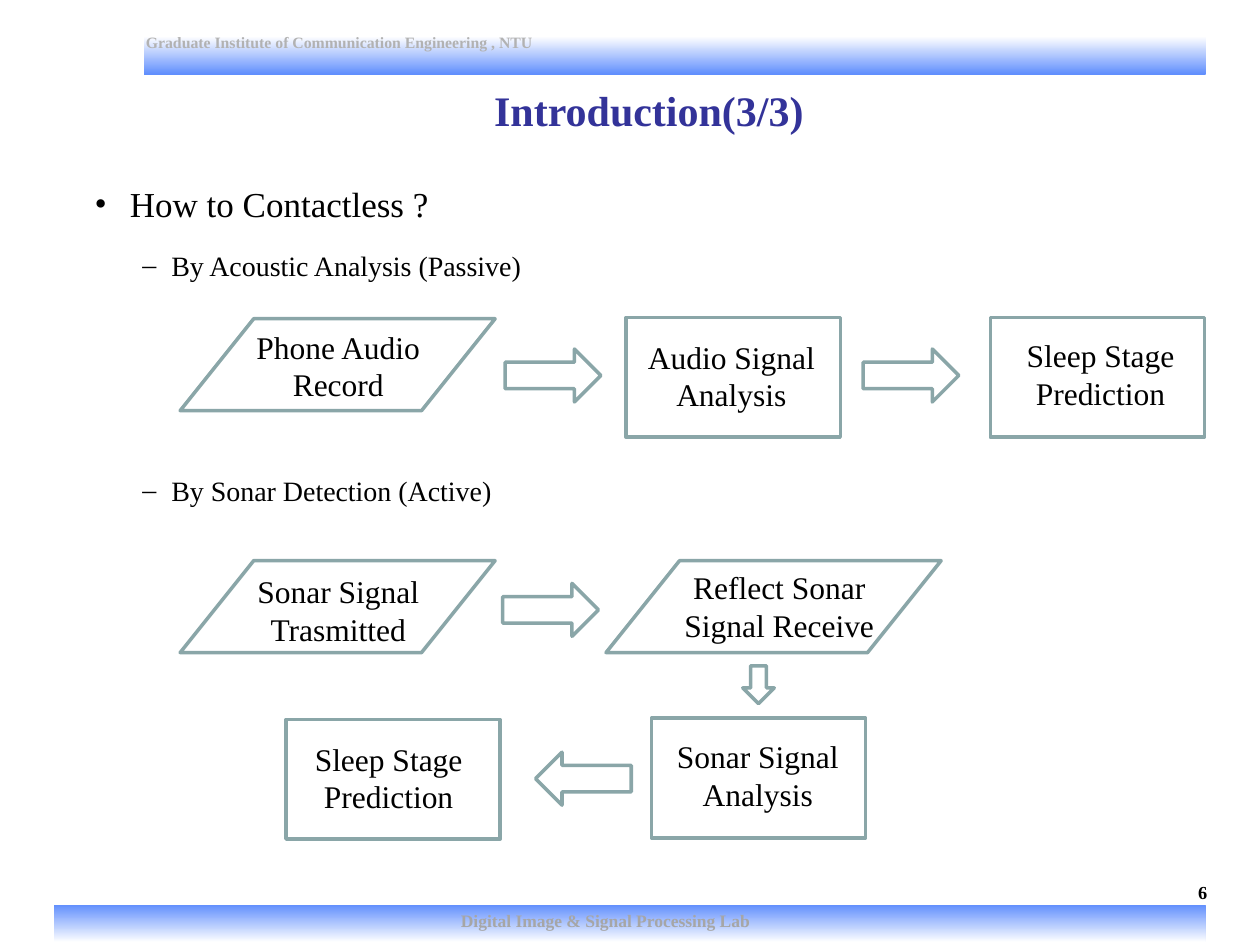
import pptx
import pptx.dml.color
import pptx.enum.shapes
import pptx.enum.text
import pptx.util
from lxml import etree
from pptx.util import Inches

FONT = "Times New Roman"
OUTLINE = "8AA6A8"
BLACK = "000000"
WHITE = "FFFFFF"
BAR_BLUE = "618FFD"
SHAPE = pptx.enum.shapes.MSO_SHAPE
ALIGN = pptx.enum.text.PP_ALIGN
ANCHOR = pptx.enum.text.MSO_ANCHOR
AUTO_SIZE = pptx.enum.text.MSO_AUTO_SIZE


def color(hex_value):
    return pptx.dml.color.RGBColor.from_string(hex_value)


def place(shape, left, top, width, height):
    shape.left, shape.top = Inches(left), Inches(top)
    shape.width, shape.height = Inches(width), Inches(height)


def add_run(para, text, size, hex_value=BLACK, bold=False):
    span = para.add_run()
    span.text = text
    span.font.name = FONT
    span.font.size = pptx.util.Pt(size)
    span.font.bold = bold
    span.font.color.rgb = color(hex_value)


def add_shape(page, kind, left, top, width, height):
    shape = page.shapes.add_shape(
        kind, Inches(left), Inches(top), Inches(width), Inches(height))
    shape.shadow.inherit = False
    return shape


def add_bar(page, left, top, width, start, end):
    bar = add_shape(page, SHAPE.RECTANGLE, left, top, width, 0.3)
    bar.fill.gradient()
    bar.fill.gradient_angle = 270
    for stop, hex_value in zip(bar.fill.gradient_stops, (start, end)):
        stop.color.rgb = color(hex_value)
    bar.line.fill.background()


def add_outline(page, kind, left, top, width, height):
    shape = add_shape(page, kind, left, top, width, height)
    shape.fill.background()
    shape.line.color.rgb = color(OUTLINE)
    shape.line.width = pptx.util.Pt(2)
    return shape


def add_process(page, left, top):
    add_outline(page, SHAPE.RECTANGLE, left, top, 1.7, 0.95)


def add_signal(page, left, top, width=2.5):
    signal = add_outline(page, SHAPE.PARALLELOGRAM, left, top, width, 0.73)
    signal.adjustments[0] = 0.8


def add_arrow(page, left, top, rotation=0, width=0.76, height=0.42):
    arrow = add_outline(page, SHAPE.RIGHT_ARROW, left, top, width, height)
    arrow.fill.solid()
    arrow.fill.fore_color.rgb = color(WHITE)
    arrow.rotation = rotation


def add_text(page, left, top, width, height, lines, size, hex_value=BLACK,
             bold=False, align=ALIGN.LEFT, wrap=True):
    box = page.shapes.add_textbox(
        Inches(left), Inches(top), Inches(width), Inches(height))
    frame = box.text_frame
    frame.word_wrap = wrap
    for index, line in enumerate(lines):
        para = frame.paragraphs[0] if index == 0 else frame.add_paragraph()
        para.alignment = align
        add_run(para, line, size, hex_value, bold)


def add_label(page, left, top, *lines):
    add_text(page, left, top, 1.93, 0.71, lines, 18, align=ALIGN.CENTER)


def set_bullet(para, char, margin, indent):
    props = para._p.get_or_add_pPr()
    props.set("marL", str(Inches(margin)))
    props.set("indent", str(Inches(indent)))
    for tag, name, value in (("buFont", "typeface", FONT), ("buChar", "char", char)):
        element = etree.SubElement(props, pptx.oxml.ns.qn("a:" + tag))
        element.set(name, value)


def fill_title(page):
    title = page.shapes.title
    place(title, 0.65, 0.52, 9, 0.7)
    frame = title.text_frame
    frame.auto_size = AUTO_SIZE.NONE
    frame.vertical_anchor = ANCHOR.MIDDLE
    para = frame.paragraphs[0]
    para.alignment = ALIGN.CENTER
    add_run(para, "Introduction(3/3)", 24, "333399", True)


def fill_body(page):
    body = page.placeholders[1]
    place(body, 0.65, 1.23, 9, 5.75)
    frame = body.text_frame
    frame.auto_size = AUTO_SIZE.NONE
    # Text, level, size, space before; the last gap leaves room for the first flow
    items = [
        ("How to Contactless ?", 0, 20, 0),
        ("By Acoustic Analysis (Passive)", 1, 16, 4),
        ("By Sonar Detection (Active)", 1, 16, 100),
    ]
    bullets = [("•", 0.28, -0.28), ("–", 0.61, -0.23)]
    for index, (text, level, size, space) in enumerate(items):
        para = frame.paragraphs[0] if index == 0 else frame.add_paragraph()
        para.level = level
        set_bullet(para, *bullets[level])
        para.line_spacing = 1.5
        para.space_before = pptx.util.Pt(space)
        add_run(para, text, size)


def draw_passive_flow(page):
    add_signal(page, 1.43, 2.53)
    for left in (4.97, 7.86):
        add_process(page, left, 2.52)
    for left in (4.01, 6.85):
        add_arrow(page, left, 2.77)
    add_label(page, 1.72, 2.55, "Phone Audio", "Record")
    add_label(page, 4.84, 2.63, "Audio Signal Analysis")
    add_label(page, 7.77, 2.62, "Sleep Stage Prediction")


def draw_active_flow(page):
    add_signal(page, 1.43, 4.45)
    add_signal(page, 4.81, 4.45, 2.66)
    add_process(page, 5.17, 5.7)
    add_process(page, 2.27, 5.71)
    add_arrow(page, 3.99, 4.63)
    add_arrow(page, 5.87, 5.31, 90, 0.3, 0.25)
    add_arrow(page, 4.25, 5.97, 180)
    add_label(page, 1.72, 4.49, "Sonar Signal Trasmitted")
    add_label(page, 5.22, 4.46, "Reflect Sonar Signal Receive")
    add_label(page, 5.05, 5.8, "Sonar Signal Analysis")
    add_label(page, 2.12, 5.82, "Sleep Stage Prediction")


def main():
    deck = pptx.Presentation()
    deck.slide_width, deck.slide_height = Inches(10), Inches(7.5)
    page = deck.slides.add_slide(deck.slide_layouts[1])

    # Header and footer bands
    add_bar(page, 1.14, 0.29, 8.43, WHITE, BAR_BLUE)
    add_text(page, 1.06, 0.21, 3.3, 0.25,
             ["Graduate Institute of Communication Engineering , NTU"],
             9, "B2B2B2", True, wrap=False)
    add_bar(page, 0.43, 7.18, 9.14, BAR_BLUE, WHITE)
    add_text(page, 3.56, 7.17, 2.53, 0.27,
             ["Digital Image & Signal Processing Lab"],
             10, "A6A6A6", True, wrap=False)
    add_text(page, 7.35, 6.94, 2.33, 0.29, ["6"], 10.5,
             bold=True, align=ALIGN.RIGHT)

    # Title, list and the two flows
    fill_title(page)
    fill_body(page)
    draw_passive_flow(page)
    draw_active_flow(page)

    deck.save("out.pptx")


if __name__ == "__main__":
    main()
